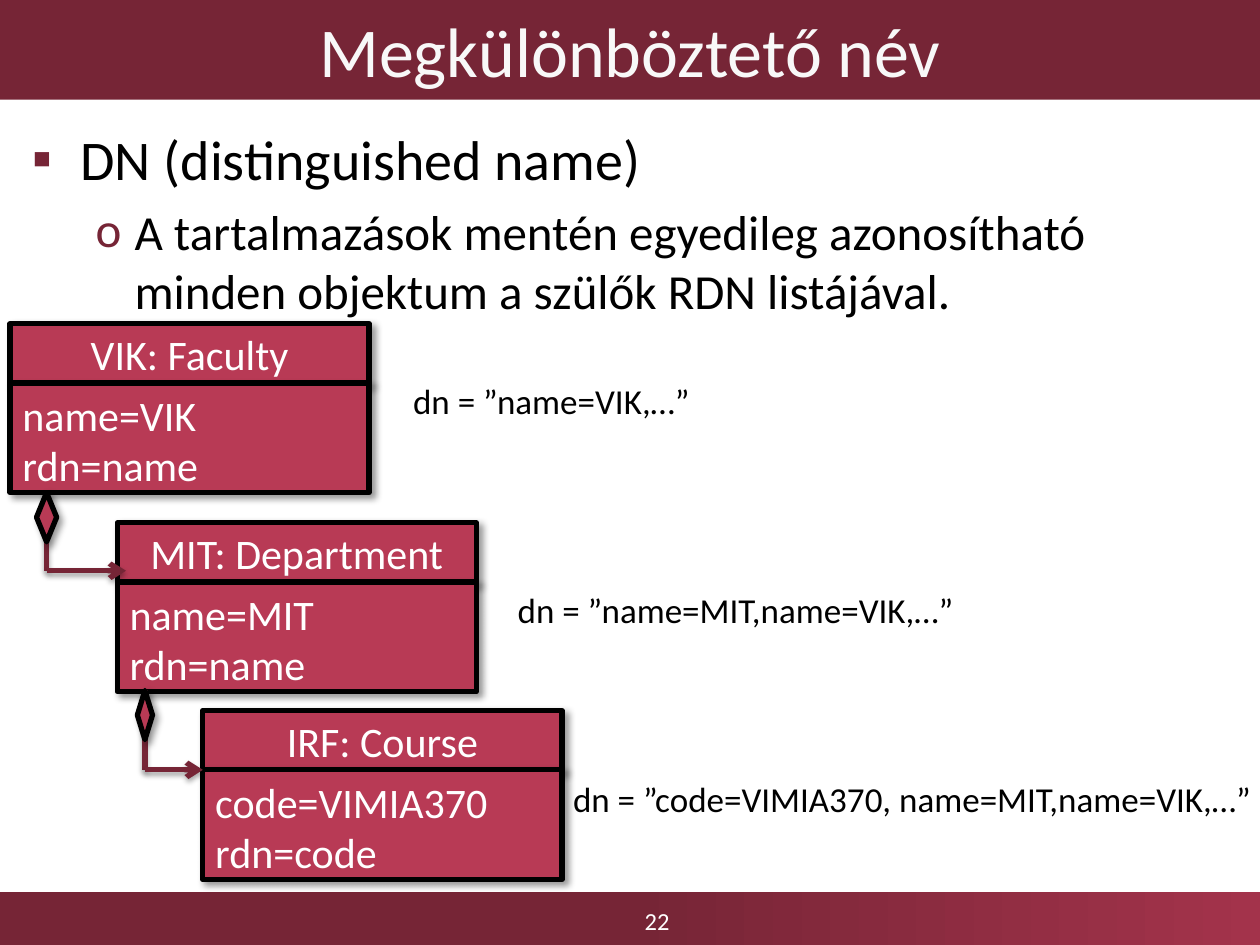
from lxml import etree
from pptx import Presentation
from pptx import util as u
from pptx.dml.color import RGBColor
from pptx.enum import shapes, text
from pptx.oxml import ns

DARK_RED = RGBColor(0x76, 0x25, 0x36)
BRIGHT_RED = RGBColor(0xA3, 0x33, 0x4B)
BOX_RED = RGBColor(0xB8, 0x3A, 0x55)
BLACK = RGBColor(0, 0, 0)
WHITE = RGBColor(0xFF, 0xFF, 0xFF)
OFF_WHITE = RGBColor(0xF8, 0xF8, 0xF8)
FONT = "Calibri"

BOX_WIDTH, HEADER_HEIGHT, ATTRIBUTES_HEIGHT = 2.85, 0.47, 0.87
DIAMOND_LENGTH = 0.39


def inches(*lengths):
    return [u.Inches(length) for length in lengths]


def add_child(parent, tag, **attributes):
    return etree.SubElement(parent, ns.qn(tag), attributes)


def add_shadow(shape, blur, distance, degrees, opacity):
    shape_properties = shape._element.spPr
    for old_effects in shape_properties.findall(ns.qn("a:effectLst")):
        shape_properties.remove(old_effects)
    effects = add_child(shape_properties, "a:effectLst")
    shadow = add_child(effects, "a:outerShdw", blurRad=str(u.Pt(blur)),
                       dist=str(u.Pt(distance)), dir=str(degrees * 60000),
                       algn="tl", rotWithShape="0")
    color = add_child(shadow, "a:srgbClr", val=str(BLACK))
    add_child(color, "a:alpha", val=str(opacity * 1000))


def add_run(paragraph, words, size, color):
    run = paragraph.add_run()
    run.text = words
    run.font.name = FONT
    run.font.size = u.Pt(size)
    run.font.color.rgb = color


def fill_text(shape, lines, size, color, align=text.PP_ALIGN.LEFT,
              anchor=text.MSO_ANCHOR.TOP, wrap=True):
    frame = shape.text_frame
    frame.word_wrap = wrap
    frame.vertical_anchor = anchor
    for index, line in enumerate(lines):
        paragraph = frame.add_paragraph() if index else frame.paragraphs[0]
        paragraph.alignment = align
        add_run(paragraph, line, size, color)


def fill_centered(shape, words, size, color):
    fill_text(shape, [words], size, color, text.PP_ALIGN.CENTER,
              text.MSO_ANCHOR.MIDDLE)


def add_bar(slide, left, top, width, height):
    bar = slide.shapes.add_shape(shapes.MSO_SHAPE.RECTANGLE,
                                 *inches(left, top, width, height))
    bar.shadow.inherit = False
    bar.line.fill.background()
    bar.fill.solid()
    bar.fill.fore_color.rgb = DARK_RED
    return bar


def add_title(slide, left, top, width, height):
    bar = add_bar(slide, left, top, width, height)
    fill_centered(bar, "Megkülönböztető név", 40, OFF_WHITE)


def add_footer(slide, left, top, width, height):
    bar = add_bar(slide, left, top, width, height)
    bar.fill.gradient()
    bar.fill.gradient_angle = 0
    stops = zip(bar.fill.gradient_stops, (0.5, 1), (DARK_RED, BRIGHT_RED))
    for stop, position, color in stops:
        stop.position = position
        stop.color.rgb = color
    number = slide.shapes.add_textbox(
        *inches(left + 3.59, top + 0.03, 3.25, 0.39))
    fill_centered(number, "22", 14, WHITE)


def add_bullet(paragraph, symbol, margin, hanging, level):
    paragraph.level = level
    properties = paragraph._p.get_or_add_pPr()
    properties.set("marL", str(u.Inches(margin)))
    properties.set("indent", str(-u.Inches(hanging)))
    color = add_child(properties, "a:buClr")
    add_child(color, "a:srgbClr", val=str(DARK_RED))
    add_child(properties, "a:buFont", typeface=FONT)
    add_child(properties, "a:buChar", char=symbol)


def add_body(slide, left, top, width, height):
    frame = slide.shapes.add_textbox(
        *inches(left, top, width, height)).text_frame
    frame.word_wrap = True
    paragraph = frame.paragraphs[0]
    add_bullet(paragraph, "▪", 0.38, 0.38, 0)
    add_run(paragraph, "DN (distinguished name)", 32, BLACK)
    paragraph = frame.add_paragraph()
    add_bullet(paragraph, "o", 0.81, 0.31, 1)
    paragraph.space_before = u.Pt(5.6)
    add_run(paragraph, "A tartalmazások mentén egyedileg azonosítható "
            "minden objektum a szülők RDN listájával.", 28, BLACK)


def add_uml_shape(slide_shapes, kind, left, top, width, height):
    shape = slide_shapes.add_shape(kind, *inches(left, top, width, height))
    shape.fill.solid()
    shape.fill.fore_color.rgb = BOX_RED
    shape.line.color.rgb = BLACK
    shape.line.width = u.Pt(3)
    add_shadow(shape, 4, 3, 45, 40)
    return shape


def add_object(slide, left, top, name, attributes):
    rectangle = shapes.MSO_SHAPE.RECTANGLE
    header = add_uml_shape(slide.shapes, rectangle, left, top,
                           BOX_WIDTH, HEADER_HEIGHT)
    fill_centered(header, name, 24, WHITE)
    body = add_uml_shape(slide.shapes, rectangle, left, top + HEADER_HEIGHT,
                         BOX_WIDTH, ATTRIBUTES_HEIGHT)
    fill_text(body, attributes, 24, WHITE)


def add_line(group_shapes, *ends):
    line = group_shapes.add_connector(shapes.MSO_CONNECTOR.STRAIGHT,
                                      *inches(*ends))
    line.line.color.rgb = DARK_RED
    line.line.width = u.Pt(3)
    add_shadow(line, 3.1, 1.8, 90, 35)
    return line


def add_containment(slide, left, top, width, height, thickness):
    """Diamond below the parent, then an elbow with an arrow to the child."""
    parts = slide.shapes.add_group_shape().shapes
    bottom = top + height
    add_line(parts, left, top, left, bottom)
    diamond = add_uml_shape(
        parts, shapes.MSO_SHAPE.FLOWCHART_DECISION,
        left - DIAMOND_LENGTH / 2, top + (DIAMOND_LENGTH - thickness) / 2,
        DIAMOND_LENGTH, thickness)
    diamond.rotation = 270
    arrow = add_line(parts, left, bottom, left + width, bottom)
    add_child(arrow.line._get_or_add_ln(), "a:tailEnd", type="arrow")


def add_dn_label(slide, left, top, width, words):
    label = slide.shapes.add_textbox(*inches(left, top, width, 0.44))
    fill_text(label, [words], 20, BLACK, wrap=False)


def main():
    presentation = Presentation()
    presentation.slide_width, presentation.slide_height = inches(10, 7.5)
    slide = presentation.slides.add_slide(presentation.slide_layouts[6])
    add_footer(slide, 0, 7.08, 10, 0.42)
    add_title(slide, 0, 0, 10, 0.79)
    add_body(slide, 0.16, 0.94, 9.69, 6.05)

    add_object(slide, 0.08, 2.57, "VIK: Faculty", ["name=VIK", "rdn=name"])
    add_object(slide, 0.93, 4.15, "MIT: Department", ["name=MIT", "rdn=name"])
    add_object(slide, 1.61, 5.64, "IRF: Course", ["code=VIMIA370", "rdn=code"])
    add_containment(slide, 0.37, 3.91, 0.63, 0.62, 0.16)
    add_containment(slide, 1.15, 5.48, 0.46, 0.63, 0.12)

    add_dn_label(slide, 3.18, 2.96, 2.42, "dn = ”name=VIK,…”")
    add_dn_label(slide, 4.01, 4.62, 3.69, "dn = ”name=MIT,name=VIK,…”")
    add_dn_label(slide, 4.45, 6.12, 5.63,
                 "dn = ”code=VIMIA370, name=MIT,name=VIK,…”")
    presentation.save("out.pptx")


if __name__ == "__main__":
    main()
